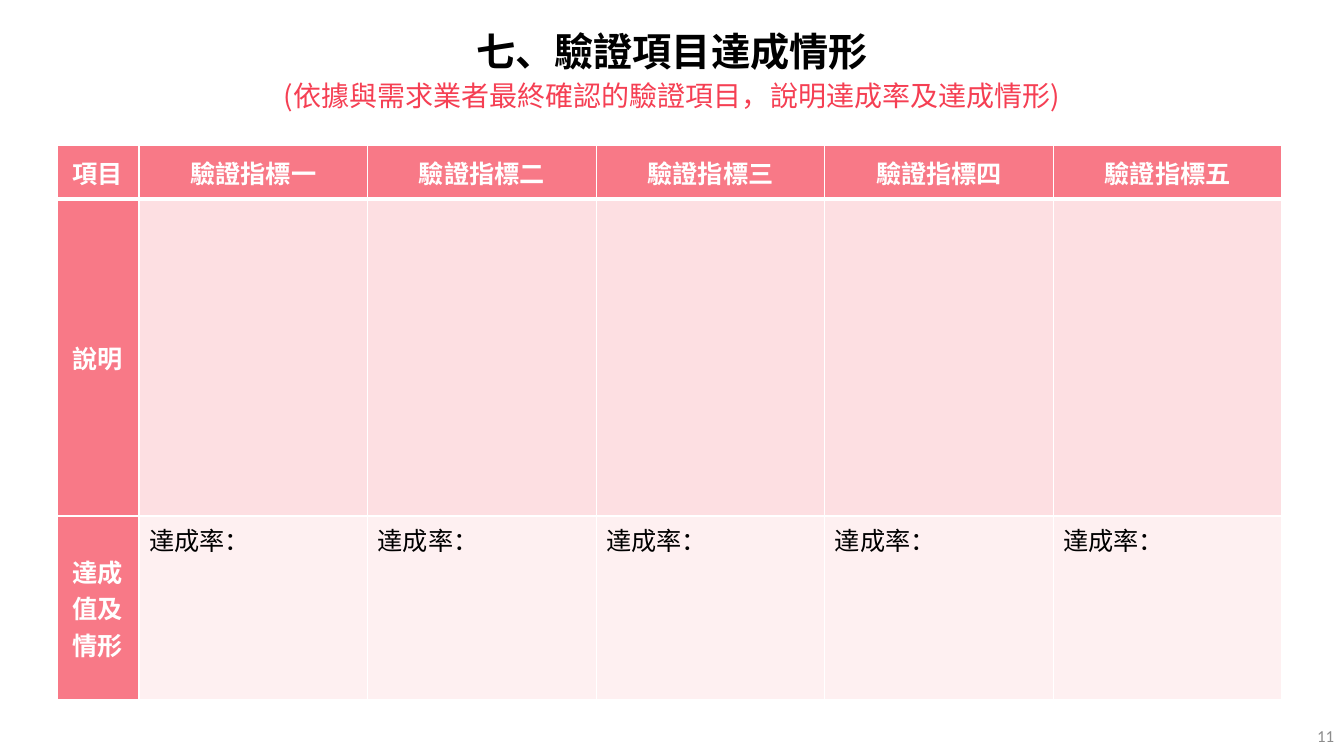
from lxml import etree
from pptx import Presentation
from pptx.dml.color import RGBColor
from pptx.enum.text import MSO_ANCHOR, PP_ALIGN
from pptx.oxml.ns import qn
from pptx.util import Pt

LEFT, CENTER, RIGHT = PP_ALIGN.LEFT, PP_ALIGN.CENTER, PP_ALIGN.RIGHT
TOP, MIDDLE = MSO_ANCHOR.TOP, MSO_ANCHOR.MIDDLE
EMU_PER_PX = 914400 / 100.8

THEME = {
    "cjk": "Noto Sans CJK SC", "latin": "Calibri",
    "title": 28, "subtitle": 20, "table": 18, "number": 12,
    "black": "000000", "white": "FFFFFF", "red": "F53F53", "gray": "8C8C8C",
    "label": "F87987", "band_dark": "FDDFE2", "band_light": "FEF0F1",
}


def px(n):
    return round(n * EMU_PER_PX)


def write(tf, text, size, color, font="cjk", bold=False, align=CENTER):
    p = tf.paragraphs[0]
    p.text, p.alignment = text, align
    p.font.size, p.font.bold = Pt(THEME[size]), bold
    p.font.name = THEME[font]
    p.font.color.rgb = RGBColor.from_string(THEME[color])
    defaults = p._p.pPr.find(qn("a:defRPr"))
    etree.SubElement(defaults, qn("a:ea"), typeface=THEME[font])


prs = Presentation()
prs.slide_width, prs.slide_height = px(1344), px(756)
s = prs.slides.add_slide(prs.slide_layouts[6])

# Title, subtitle and slide number
texts = [
    ((464, 22, 416, 57), "七、驗證項目達成情形", "title", "black", "cjk", True, CENTER, TOP, False),
    ((1041, 716, 303, 40), "11", "number", "gray", "latin", False, RIGHT, MIDDLE, True),
    ((266, 74, 812, 44), "(依據與需求業者最終確認的驗證項目，說明達成率及達成情形)",
     "subtitle", "red", "cjk", False, CENTER, TOP, False),
]
for box, text, size, color, font, bold, align, anchor, wrap in texts:
    tf = s.shapes.add_textbox(*map(px, box)).text_frame
    tf.word_wrap, tf.vertical_anchor = wrap, anchor
    write(tf, text, size, color, font, bold, align)

# Table grid
rows = [
    ["項目"] + [f"驗證指標{n}" for n in "一二三四五"],
    ["說明"] + [""] * 5,
    ["達成值及情形"] + ["達成率："] * 5,
]
row_heights = [54, 317, 184]
bands = ["label", "band_dark", "band_light"]
table_width, label_width = 1225, 82
indicator_width = (table_width - label_width) / 5

table = s.shapes.add_table(3, 6, px(57), px(145), px(table_width), px(sum(row_heights))).table
table.first_row = table.horz_banding = False
for c, column in enumerate(table.columns):
    column.width = px(indicator_width if c else label_width)

# Table cells: labels along the top and left, tinted bodies elsewhere
for r, row in enumerate(rows):
    table.rows[r].height = px(row_heights[r])
    for c, text in enumerate(row):
        cell = table.cell(r, c)
        is_label = r == 0 or c == 0
        cell.vertical_anchor = MIDDLE if is_label else TOP
        write(cell.text_frame, text, "table", "white" if is_label else "black",
              bold=is_label, align=CENTER if is_label else LEFT)

        # Thin white borders, thicker under the header row
        tcPr = cell._tc.get_or_add_tcPr()
        for side in "LRTB":
            thick = (r, side) in ((0, "B"), (1, "T"))
            ln = etree.SubElement(tcPr, qn(f"a:ln{side}"), w=str(Pt(3 if thick else 1)))
            line_fill = etree.SubElement(ln, qn("a:solidFill"))
            etree.SubElement(line_fill, qn("a:srgbClr"), val=THEME["white"])
        cell.fill.solid()
        cell.fill.fore_color.rgb = RGBColor.from_string(THEME["label" if is_label else bands[r]])

prs.save("out.pptx")
